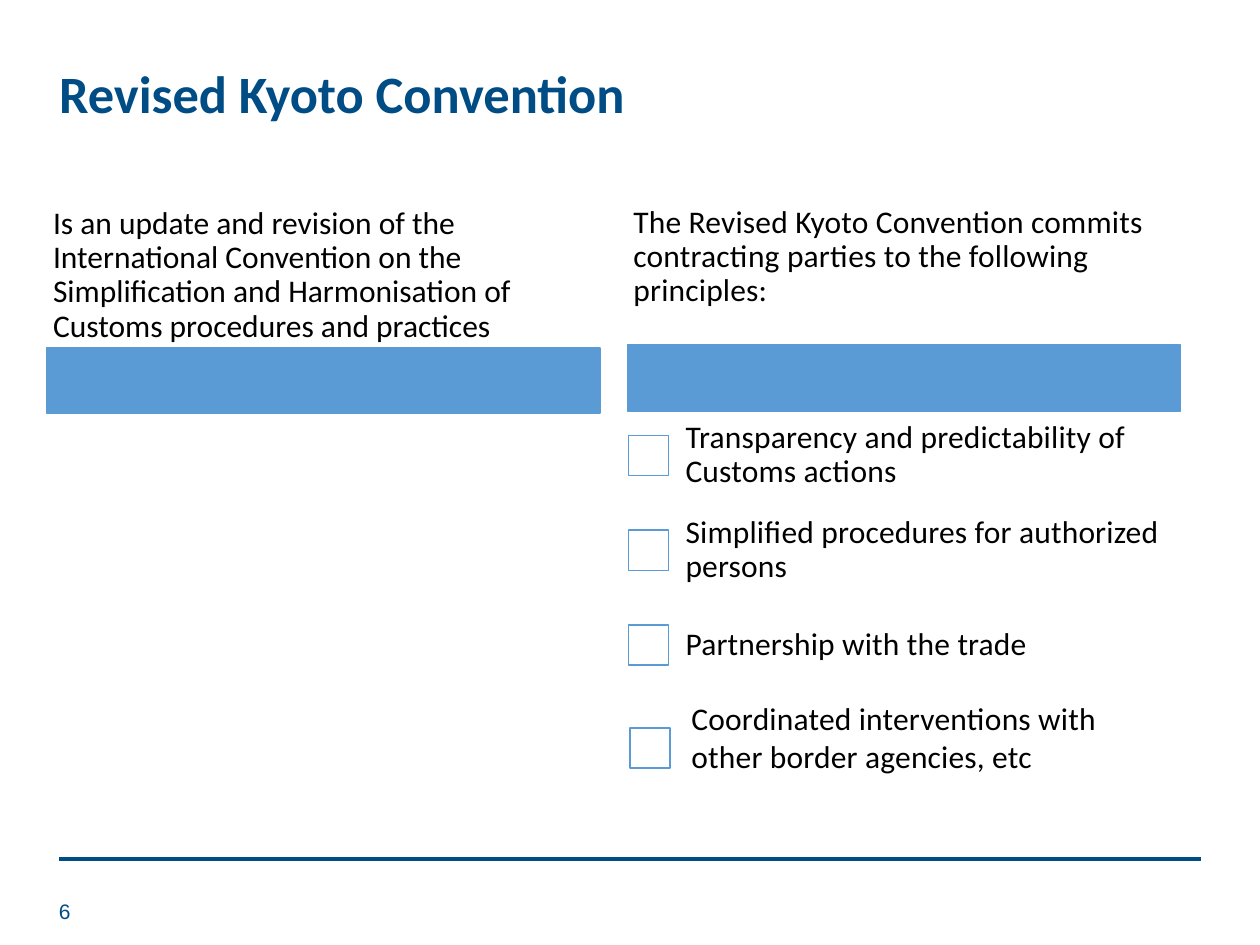
from lxml.etree import SubElement
from pptx import Presentation
from pptx.dml.color import RGBColor
from pptx.enum.shapes import MSO_CONNECTOR, MSO_SHAPE
from pptx.enum.text import MSO_ANCHOR, PP_ALIGN
from pptx.oxml.ns import qn
from pptx.util import Cm, Pt

NAVY, BLUE, WHITE, BLACK = "004C85", "5B9BD5", "FFFFFF", "000000"

TITLE = "Revised Kyoto Convention"
NUMBER = "6"
# text, left, top, height, bar left, bar top, letter spacing
COLUMNS = [
    ("Is an update and revision of the International Convention on the "
     "Simplification and Harmonisation of Customs procedures and practices",
     0.97, 4.01, 3.1, 0.94, 7.01, 0),
    ("The Revised Kyoto Convention commits contracting parties to the "
     "following principles:",
     12.67, 4.01, 2.36, 12.65, 6.96, 10),
]
COL_W, BAR_H = 11.15, 1.32
CHECKS = [
    "Transparency and predictability of Customs actions",
    "Simplified procedures for authorized persons",
    "Partnership with the trade",
]
LAST = "Coordinated interventions with other border agencies, etc"
BOX, BOX_X = 0.81, 12.67
ROW_X, ROW_Y, ROW_W, ROW_H = 13.46, 8.23, 10.36, 1.91


def color(code):
    return RGBColor.from_string(code)


def place(item, *sizes):
    item.left, item.top, item.width, item.height = map(Cm, sizes)


def write(item, text, size=18, code=BLACK, font="Calibri", bold=False,
          inset=(0.25, 0.13), line=0.9, anchor=MSO_ANCHOR.MIDDLE, spread=0):
    """Fill a shape with one formatted paragraph; spread is letter spacing."""
    frame = item.text_frame
    frame.text = text
    frame.word_wrap = True
    frame.vertical_anchor = anchor
    frame.margin_left = frame.margin_right = Cm(inset[0])
    frame.margin_top = frame.margin_bottom = Cm(inset[1])
    para = frame.paragraphs[0]
    para.alignment = PP_ALIGN.LEFT
    para.line_spacing = line
    run = para.runs[0]
    run.font.size, run.font.name, run.font.bold = Pt(size), font, bold
    run.font.color.rgb = color(code)
    if spread:
        run.font._element.set("spc", str(spread))


def label(slide, text, sizes, **style):
    write(slide.shapes.add_textbox(*map(Cm, sizes)), text, **style)


def block(slide, sizes, fill):
    shape = slide.shapes.add_shape(MSO_SHAPE.RECTANGLE, *map(Cm, sizes))
    shape.shadow.inherit = False
    shape.fill.solid()
    shape.fill.fore_color.rgb = color(fill)
    shape.line.color.rgb = color(BLUE)
    shape.line.width = Pt(1)


def rule(slide, left, right, top):
    line = slide.shapes.add_connector(
        MSO_CONNECTOR.STRAIGHT, Cm(left), Cm(top), Cm(right), Cm(top))
    line.line.color.rgb = color(NAVY)
    line.line.width = Pt(2)
    SubElement(line._element.spPr, qn("a:effectLst"))


def main():
    deck = Presentation()
    deck.slide_width, deck.slide_height = Cm(25.4), Cm(19.05)
    slide = deck.slides.add_slide(deck.slide_layouts[5])

    rule(slide, 1.19, 24.21, 17.32)
    title = slide.shapes.title
    place(title, 0.94, 1.22, 21.89, 1.47)
    write(title, TITLE, size=30, code=NAVY, bold=True)
    label(slide, NUMBER, (0.94, 17.86, 1.17, 1.02),
          size=12, code=NAVY, font="Arial", line=1)

    for text, left, top, height, bar_x, bar_y, spread in COLUMNS:
        block(slide, (bar_x, bar_y, COL_W, BAR_H), BLUE)
        label(slide, text, (left, top, COL_W, height),
              inset=(0.1, 0.08), spread=spread)

    for i, text in enumerate(CHECKS):
        top = ROW_Y + i * ROW_H
        block(slide, (BOX_X, top + (ROW_H - BOX) / 2, BOX, BOX), WHITE)
        label(slide, text, (ROW_X, top, ROW_W, ROW_H),
              inset=(0.36, 0.36), spread=10)

    block(slide, (12.7, 14.68, BOX, BOX), WHITE)
    label(slide, LAST, (13.69, 13.97, 9.88, 1.8),
          line=1, anchor=MSO_ANCHOR.TOP, spread=10)

    deck.save("out.pptx")


if __name__ == "__main__":
    main()
